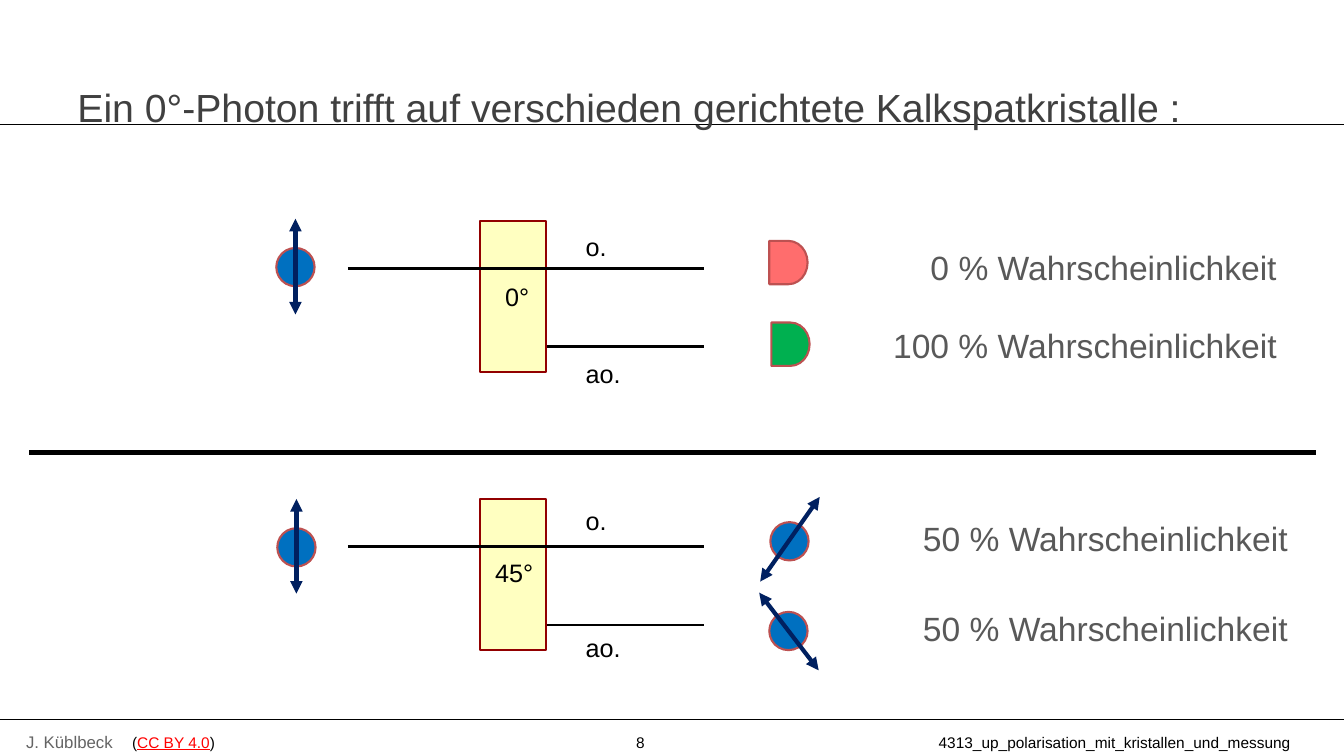
from lxml import etree
from pptx import Presentation
from pptx.dml.color import RGBColor
from pptx.enum.shapes import MSO_CONNECTOR, MSO_SHAPE
from pptx.enum.text import MSO_ANCHOR, PP_ALIGN
from pptx.oxml.ns import qn
from pptx.util import Inches, Pt

LINE = MSO_CONNECTOR.STRAIGHT
RECT, OVAL, DELAY = MSO_SHAPE.RECTANGLE, MSO_SHAPE.OVAL, MSO_SHAPE.FLOWCHART_DELAY
LEFT, RIGHT, CENTER = PP_ALIGN.LEFT, PP_ALIGN.RIGHT, PP_ALIGN.CENTER
TOP, MIDDLE = MSO_ANCHOR.TOP, MSO_ANCHOR.MIDDLE

TITLE = "Ein 0°-Photon trifft auf verschieden gerichtete Kalkspatkristalle :"
AUTHOR = "J. Küblbeck"
FOOTER = [("(", "black"), ("CC BY 4.0", "link"),
          (")\t8\t4313_up_polarisation_mit_kristallen_und_messung", "black")]
TABS = (5, 8)

# Crystal top, angle label top, o. label top, angle
SETUPS = [(2.19, 2.74, 2.25, "0°"), (4.95, 5.48, 4.96, "45°")]
# Circle left and top, arrow start, arrow end
PHOTONS = [
    (2.74, 2.46, (2.93, 2.17), (2.93, 3.12)),
    (2.75, 5.24, (2.94, 4.95), (2.94, 5.89)),
    (7.64, 5.18, (8.13, 4.93), (7.54, 5.77)),
    (7.63, 6.07, (7.53, 5.88), (8.12, 6.65)),
]
DETECTORS = [(7.63, 2.39, "dark"), (7.65, 3.2, "hit")]
CHANCES = [(8.17, 2.4, 0), (8.17, 3.17, 100), (8.28, 5.09, 50), (8.28, 5.98, 50)]
RULES = [(0, 13.33, 1.24, 0.75), (0, 13.33, 7.14, 0.75), (0.29, 13.05, 4.49, 3.75)]

THEME = {
    "font": "Arial",
    "size": {"title": 28, "chance": 24, "label": 18, "author": 12, "footer": 11},
    "color": {
        "black": "000000", "title": "404040", "chance": "595959",
        "author": "646464", "link": "FF0000", "crystal": "FFFFC1",
        "edge": "920000", "photon": "0070C0", "rim": "BD5151",
        "arrow": "002060", "dark": "FF6D6D", "hit": "00B050",
    },
}


def color(name):
    return RGBColor.from_string(THEME["color"][name])


def add_shape(shapes, kind, box, fill, edge):
    shape = shapes.add_shape(kind, *map(Inches, box))
    shape.shadow.inherit = False
    shape.fill.solid()
    shape.fill.fore_color.rgb = color(fill)
    shape.line.color.rgb = color(edge)
    shape.line.width = Pt(1.5)


def add_line(shapes, start, end, width, tint="black", heads=()):
    line = shapes.add_connector(LINE, *map(Inches, start + end))
    line.line.color.rgb = color(tint)
    line.line.width = Pt(width)
    outline = line.line._get_or_add_ln()
    for head in heads:
        etree.SubElement(outline, qn("a:" + head), type="triangle")
    etree.SubElement(line._element.spPr, qn("a:effectLst"))


def add_text(shapes, box, runs, size, align=LEFT, anchor=TOP, wrap=True,
             inset=None, before=0):
    frame = shapes.add_textbox(*map(Inches, box)).text_frame
    form = {"word_wrap": wrap, "vertical_anchor": anchor}
    if inset is not None:
        for side in ("left", "right", "top", "bottom"):
            form["margin_" + side] = Inches(inset)
    for key, value in form.items():
        setattr(frame, key, value)
    para = frame.paragraphs[0]
    para.alignment = align
    para.space_before = Pt(before)
    for text, tint in runs:
        run = para.add_run()
        run.text = text
        look = {"name": THEME["font"], "size": Pt(THEME["size"][size]),
                "underline": tint == "link"}
        for key, value in look.items():
            setattr(run.font, key, value)
        run.font.color.rgb = color(tint)
    return para


def add_setup(shapes, top, mark, label, angle):
    """Draw a crystal with its ordinary and extraordinary beams."""
    add_shape(shapes, RECT, (4.76, top, 0.66, 1.5), "crystal", "edge")
    for start, drop in ((3.45, 0.47), (5.43, 1.25)):
        add_line(shapes, (start, top + drop), (6.98, top + drop), 2)
    add_text(shapes, (4.8, mark, 0.66, 0.4) if angle == "0°" else
             (4.77, mark, 0.66, 0.4), [(angle, "black")], "label",
             align=CENTER, wrap=False)
    for name, drop in (("o.", 0), ("ao.", 1.26)):
        add_text(shapes, (5.71, label + drop, 1.58, 0.4), [(name, "black")], "label")


def add_photon(shapes, left, top, start, end):
    """Group a photon with its polarisation arrow."""
    group = shapes.add_group_shape().shapes
    add_shape(group, OVAL, (left, top, 0.38, 0.38), "photon", "rim")
    add_line(group, start, end, 3, "arrow", ("headEnd", "tailEnd"))


def add_footer(shapes):
    add_text(shapes, (0.16, 7.21, 1.55, 0.3), [(AUTHOR, "author")], "author")
    para = add_text(shapes, (1.31, 7.27, 11.86, 0.19), FOOTER, "footer", inset=0)
    stops = etree.SubElement(para._p.get_or_add_pPr(), qn("a:tabLst"))
    for stop in TABS:
        etree.SubElement(stops, qn("a:tab"), pos=str(Inches(stop)), algn="l")


def main():
    deck = Presentation()
    deck.slide_width, deck.slide_height = Inches(13.33), Inches(7.5)
    shapes = deck.slides.add_slide(deck.slide_layouts[6]).shapes
    add_footer(shapes)
    for left, right, y, width in RULES:
        add_line(shapes, (left, y), (right, y), width)
    add_text(shapes, (0.67, 0.75, 12, 0.63), [(TITLE, "title")], "title", anchor=MIDDLE)
    for setup in SETUPS:
        add_setup(shapes, *setup)
    for photon in PHOTONS:
        add_photon(shapes, *photon)
    for left, top, fill in DETECTORS:
        add_shape(shapes, DELAY, (left, top, 0.38, 0.43), fill, "rim")
    for left, top, chance in CHANCES:
        add_text(shapes, (left, top, 4.59, 0.63),
                 [(f"{chance} % Wahrscheinlichkeit", "chance")], "chance",
                 align=RIGHT, before=3)
    deck.save("out.pptx")


if __name__ == "__main__":
    main()
